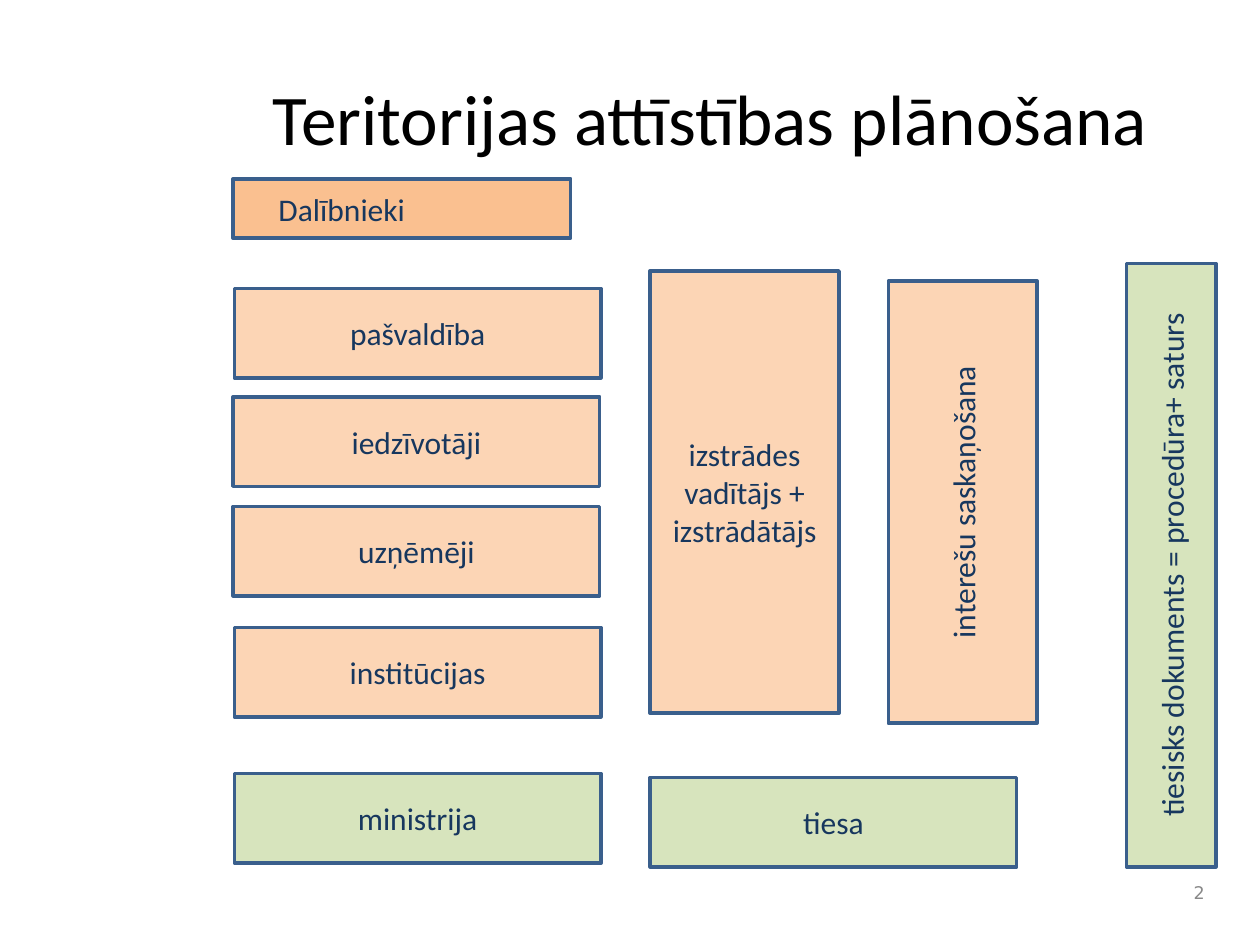
from pptx import Presentation
from pptx.dml.color import RGBColor
from pptx.enum.shapes import MSO_SHAPE
from pptx.enum.text import MSO_ANCHOR, PP_ALIGN
from pptx.util import Inches, Pt

ORANGE = RGBColor(0xFA, 0xC0, 0x90)
PEACH = RGBColor(0xFC, 0xD5, 0xB5)
GREEN = RGBColor(0xD7, 0xE4, 0xBD)
BLUE = RGBColor(0x3A, 0x5F, 0x8C)
NAVY = RGBColor(0x17, 0x37, 0x5E)
GRAY = RGBColor(0x89, 0x89, 0x89)
BLACK = RGBColor(0, 0, 0)

deck = Presentation()
deck.slide_width, deck.slide_height = Inches(10), Inches(7.5)
slide = deck.slides.add_slide(deck.slide_layouts[5])


def share(x, y, w, h):
    """Turn percentages of the slide's width and height into lengths."""
    wide, high = deck.slide_width, deck.slide_height
    return [int(part * side / 100)
            for part, side in zip((x, y, w, h), (wide, high, wide, high))]


def write(shape, text, size, color, name="Calibri", align=PP_ALIGN.CENTER):
    frame = shape.text_frame
    frame.text = text
    frame.word_wrap = True
    frame.vertical_anchor = MSO_ANCHOR.MIDDLE
    line = frame.paragraphs[0]
    line.alignment = align
    for key, value in {"size": Pt(size), "name": name}.items():
        setattr(line.font, key, value)
    line.font.color.rgb = color


# Title and page number
title = slide.shapes.title
title.left, title.top, title.width, title.height = share(17.7, 4, 77.3, 16.67)
write(title, "Teritorijas attīstības plānošana", 40.7, BLACK)
page = slide.shapes.add_textbox(*share(93.3, 92.27, 3.3, 4.4))
write(page, "2", 10, GRAY, "DejaVu Sans", PP_ALIGN.RIGHT)

# Columns, and the two sizes that repeat, in percent of the slide
LEFT, MID = 18.5, 51.6
WIDE, LOW, TALL = 29.1, 9.47, 46.8

boxes = [
    ("Dalībnieki", ORANGE, LEFT, 18.93, 26.8, 6.27),
    ("pašvaldība", PEACH, LEFT + 0.1, 30.53, WIDE, LOW),
    ("iedzīvotāji", PEACH, LEFT, 42, WIDE, LOW),
    ("uzņēmēji", PEACH, LEFT, 53.6, WIDE, LOW),
    ("institūcijas", PEACH, LEFT + 0.1, 66.4, WIDE, LOW),
    ("interešu saskaņošana", PEACH, 70.5, 29.73, 11.8, TALL),
    ("izstrādes vadītājs + izstrādātājs", PEACH, MID, 28.67, 15, TALL),
    ("tiesisks dokuments = procedūra+ saturs", GREEN, 89.4, 27.87, 7.1, 63.87),
    ("ministrija", GREEN, LEFT + 0.1, 81.87, WIDE, LOW),
    ("tiesa", GREEN, MID, 82.27, WIDE, LOW),
]
upright = {"interešu saskaņošana", "tiesisks dokuments = procedūra+ saturs"}

for text, fill, *place in boxes:
    box = slide.shapes.add_shape(MSO_SHAPE.RECTANGLE, *share(*place))
    box.shadow.inherit = False
    box.fill.solid()
    box.fill.fore_color.rgb = fill
    box.line.color.rgb = BLUE
    box.line.width = Pt(2)
    write(box, text, 18, NAVY)
    if text in upright:
        box.element.txBody.bodyPr.set("vert", "vert270")
    if fill == ORANGE:
        box.text_frame.margin_left = Inches(0.36)
        box.text_frame.paragraphs[0].alignment = PP_ALIGN.LEFT

deck.save("out.pptx")
